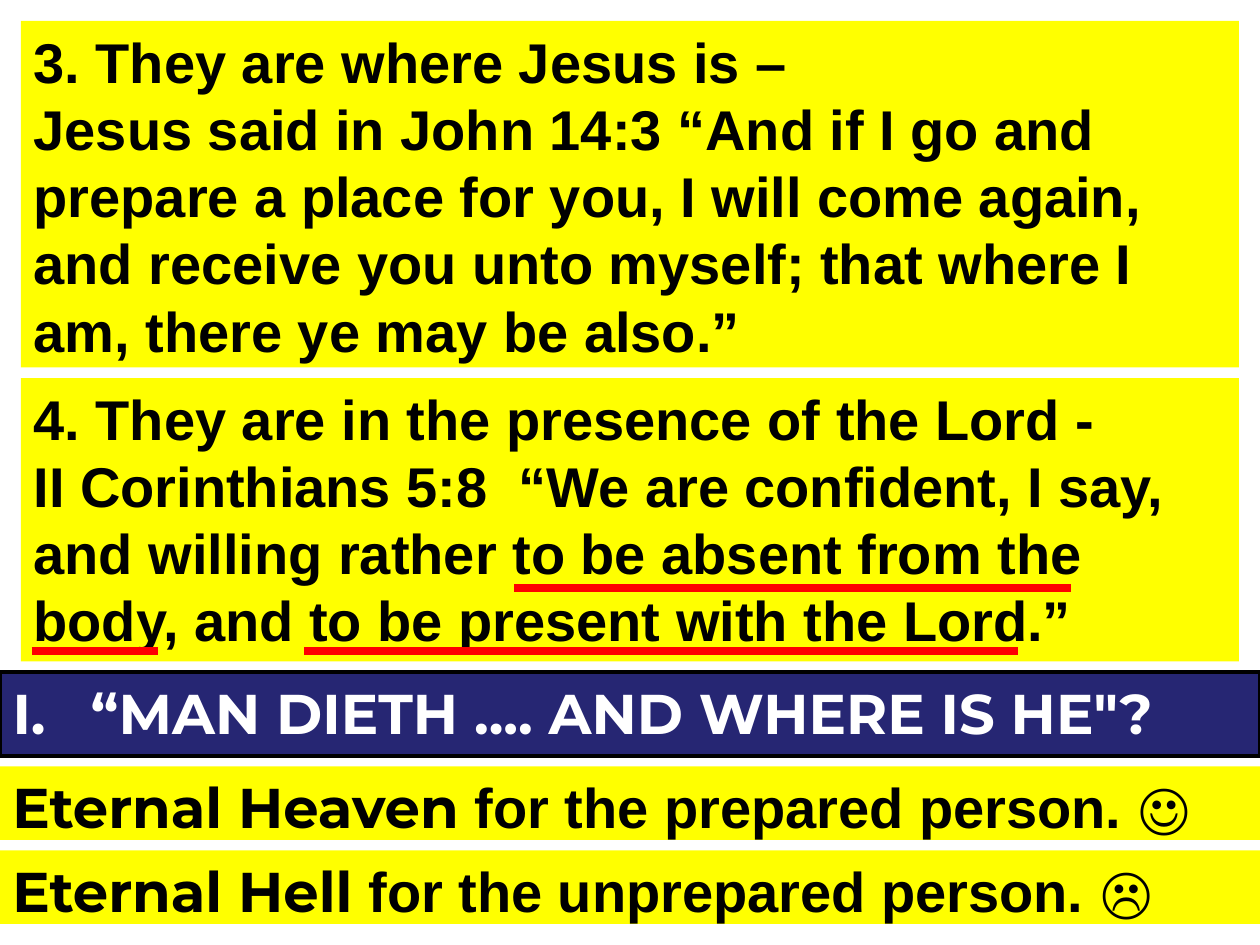
from pptx import Presentation
from pptx.dml.color import RGBColor
from pptx.enum.shapes import MSO_CONNECTOR, MSO_SHAPE
from pptx.enum.text import MSO_ANCHOR, MSO_AUTO_SIZE, PP_ALIGN
from pptx.oxml.ns import qn
from pptx.util import Inches, Pt
from lxml.etree import SubElement

COLS, ROWS = 120, 90
SANS, HEAD = "Arial", "Montserrat"


def paint(code):
    return RGBColor.from_string(code)


class Board:
    """Style and current slide; lengths are columns and rows of the grid."""
    ink, gold, navy, white, red = "000000", "FFFF00", "262673", "FFFFFF", "FF0000"
    size = 32

    def __init__(self, deck, slide):
        self.slide = slide
        self.dx, self.dy = deck.slide_width / COLS, deck.slide_height / ROWS

    def place(self, shape, col, row, wide, high):
        shape.left, shape.top = round(col * self.dx), round(row * self.dy)
        shape.width, shape.height = round(wide * self.dx), round(high * self.dy)

    def letter(self, shape, paras, color):
        """Fill a shape with paragraphs, each a list of (text, font) runs."""
        frame = shape.text_frame
        frame.word_wrap = True
        frame.auto_size = MSO_AUTO_SIZE.NONE
        frame.vertical_anchor = MSO_ANCHOR.TOP
        for i, runs in enumerate(paras):
            para = frame.add_paragraph() if i else frame.paragraphs[0]
            para.alignment = PP_ALIGN.LEFT
            para.space_before = Pt(0)
            for text, face in runs:
                run = para.add_run()
                run.text = text
                font = run.font
                font.name, font.size, font.bold = face, Pt(self.size), True
                font.color.rgb = paint(color)

    def fill(self, shape, color):
        shape.fill.solid()
        shape.fill.fore_color.rgb = paint(color)

    def title(self, text, mark, row, high):
        """Numbered heading across the slide."""
        shape = self.slide.shapes.title
        self.place(shape, 0, row, COLS, high)
        self.fill(shape, self.navy)
        shape.line.color.rgb = paint(self.ink)
        shape.line.width = Pt(2.25)
        self.letter(shape, [[(text, HEAD)]], self.white)
        props = shape.text_frame.paragraphs[0]._p.get_or_add_pPr()
        props.set("marL", str(Inches(0.62)))
        props.set("indent", str(-Inches(0.62)))
        SubElement(props, qn("a:buFont"), typeface=HEAD)
        SubElement(props, qn("a:buAutoNum"), type=mark)

    def verse(self, slot, row, high, *lines):
        shape = self.slide.placeholders[slot]
        self.place(shape, 2, row, COLS - 4, high)
        self.fill(shape, self.gold)
        self.letter(shape, [[(line, SANS)] for line in lines], self.ink)
        for para in shape.text_frame.paragraphs:
            props = para._p.get_or_add_pPr()
            props.set("marL", "0")
            props.set("indent", "0")
            SubElement(props, qn("a:buNone"))

    def band(self, row, high, *runs):
        shape = self.slide.shapes.add_shape(MSO_SHAPE.RECTANGLE, 0, 0, 0, 0)
        self.place(shape, 0, row, COLS, high)
        shape.shadow.inherit = False
        shape.line.fill.background()
        self.fill(shape, self.gold)
        self.letter(shape, [runs], self.ink)

    def rule(self, start, end, row):
        """Red stroke under a phrase."""
        y = round(row * self.dy)
        line = self.slide.shapes.add_connector(
            MSO_CONNECTOR.STRAIGHT, round(start * self.dx), y, round(end * self.dx), y)
        line.line.color.rgb = paint(self.red)
        line.line.width = Pt(4.5)
        SubElement(line._element.spPr, qn("a:effectLst"))


def main():
    deck = Presentation()
    deck.slide_width, deck.slide_height = Inches(10), Inches(7.5)
    slide = deck.slides.add_slide(deck.slide_layouts[3])
    board = Board(deck, slide)

    board.verse(1, 2, 33, "3. They are where Jesus is –",
                "Jesus said in John 14:3 “And if I go and prepare a place for you, "
                "I will come again, and receive you unto myself; that where I am, "
                "there ye may be also.”")
    board.verse(2, 36, 27, "4. They are in the presence of the Lord -",
                "II Corinthians 5:8  “We are confident, I say, and willing rather "
                "to be absent from the body, and to be present with the Lord.”")
    board.title("“MAN DIETH .... AND WHERE IS HE\"?", "romanUcPeriod", 64, 8)
    board.band(73, 7, ("Eternal Heaven", HEAD),
               (" for the prepared person. ", SANS), ("☺", HEAD))
    board.band(81, 7, ("Eternal Hell", HEAD), (" for the unprepared person. ☹", SANS))
    for start, end, row in [(49, 102, 56), (3, 15, 62), (29, 97, 62)]:
        board.rule(start, end, row)

    deck.save("out.pptx")


if __name__ == "__main__":
    main()
